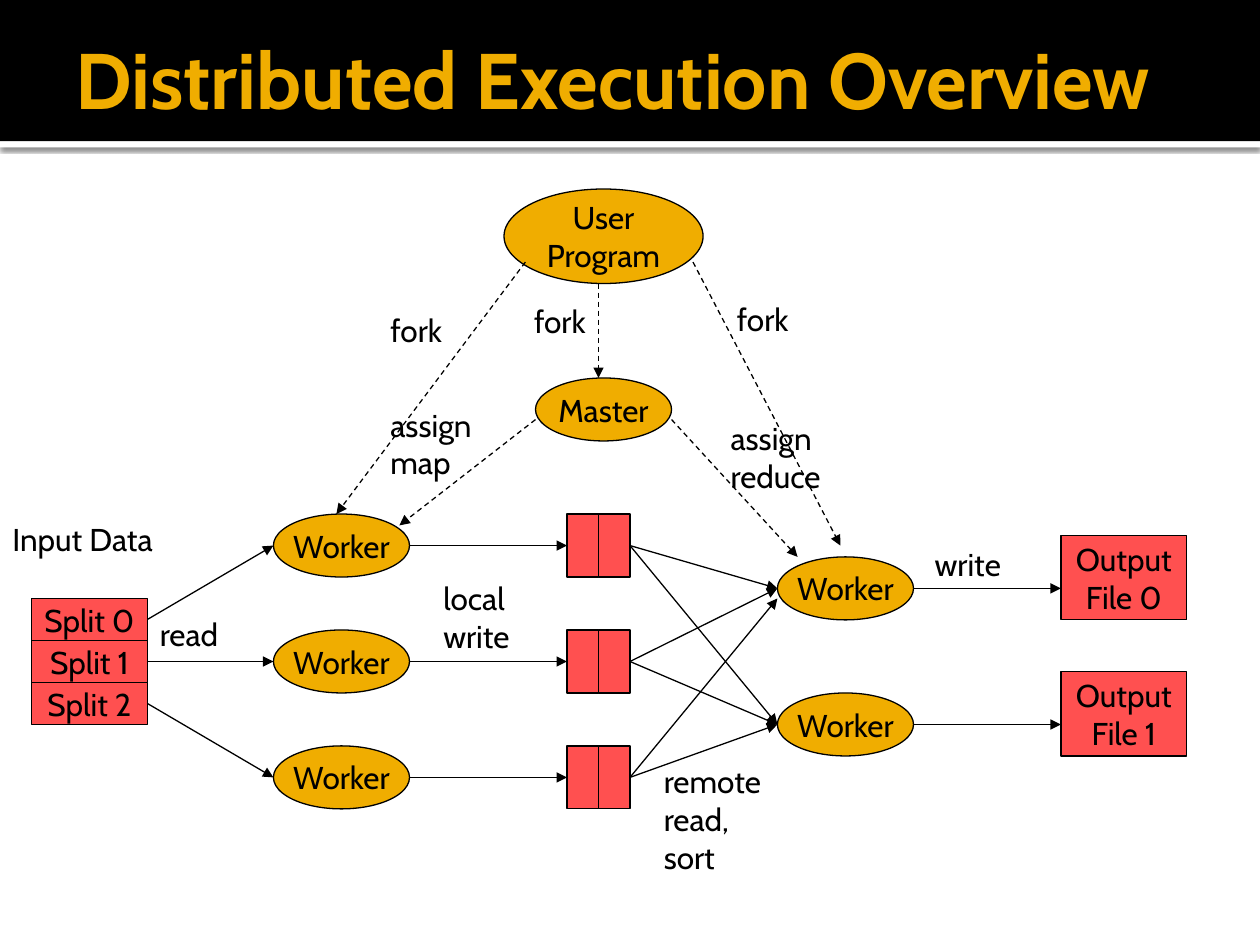
from lxml.etree import SubElement
from pptx import Presentation
from pptx.dml.color import RGBColor
from pptx.enum.dml import MSO_LINE
from pptx.enum.shapes import MSO_CONNECTOR, MSO_SHAPE
from pptx.enum.text import MSO_ANCHOR, MSO_AUTO_SIZE, PP_ALIGN
from pptx.oxml.ns import qn
from pptx.util import Inches, Pt

FONT = "Cabin"
BLACK = RGBColor(0, 0, 0)
WHITE = RGBColor(255, 255, 255)
AMBER = RGBColor(0xF0, 0xAD, 0x00)
RED = RGBColor(0xFF, 0x50, 0x50)

TITLE = "Distributed Execution Overview"
SPLITS = ["Split 0", "Split 1", "Split 2"]
OUTPUTS = ["Output\nFile 0", "Output\nFile 1"]
LABELS = [
    ("fork", 3, 2.42, 0.69),
    ("fork", 4.14, 2.35, 0.69),
    ("fork", 5.75, 2.33, 0.69),
    ("assign\nmap", 3, 3.17, 0.99),
    ("assign\nreduce", 5.7, 3.28, 1.05),
    ("read", 1.17, 4.83, 0.76),
    ("local\nwrite", 3.42, 4.55, 0.83),
    ("remote\nread,\nsort", 5.17, 6, 1.1),
    ("write", 7.32, 4.28, 0.83),
    ("Input Data", 0, 4.08, 1.56),
]
CONTROL_ARROWS = [
    ((4.75, 2.25), (4.75, 3)),
    ((4.17, 2.08), (2.67, 4.08)),
    ((5.5, 2.08), (6.67, 4.33)),
    ((4.25, 3.33), (3.17, 4.17)),
    ((5.33, 3.33), (6.33, 4.42)),
]

NODE_WIDTH, NODE_HEIGHT = 1.08, 0.5
MAP_LEFT, MAP_MIDDLE, MAP_PITCH = 2.17, 4.33, 0.92
REDUCE_LEFT, REDUCE_MIDDLE, REDUCE_PITCH = 6.17, 4.67, 1.08
SPLIT_LEFT, SPLIT_TOP, SPLIT_WIDTH, SPLIT_HEIGHT = 0.25, 4.75, 0.92, 1 / 3
BUCKET_LEFT, BUCKET_WIDTH = 4.5, 0.25
OUTPUT_LEFT, OUTPUT_TOP, OUTPUT_HEIGHT = 8.42, 4.25, 0.67
LEFT_SIDE, RIGHT_SIDE = 1, 3

deck = Presentation()
deck.slide_width, deck.slide_height = Inches(10), Inches(7.5)
page = deck.slides.add_slide(deck.slide_layouts[6])


def write(box, text, align=PP_ALIGN.LEFT, size=18, color=BLACK, bold=False):
    frame = box.text_frame
    frame.word_wrap = False
    frame.text = text
    for paragraph in frame.paragraphs:
        paragraph.alignment = align
        paragraph.font.name = FONT
        paragraph.font.size = Pt(size)
        paragraph.font.bold = bold
        paragraph.font.color.rgb = color
    return frame


def add_box(kind, left, top, width, height, fill, text="", outlined=True):
    box = page.shapes.add_shape(kind, Inches(left), Inches(top), Inches(width), Inches(height))
    box.shadow.inherit = False
    box.fill.solid()
    box.fill.fore_color.rgb = fill
    if outlined:
        box.line.color.rgb = BLACK
        box.line.width = Pt(0.75)
    else:
        box.line.fill.background()
    if text:
        write(box, text, PP_ALIGN.CENTER).vertical_anchor = MSO_ANCHOR.MIDDLE
    return box


def add_node(text, left, middle):
    return add_box(MSO_SHAPE.OVAL, left, middle - NODE_HEIGHT / 2, NODE_WIDTH, NODE_HEIGHT, AMBER, text)


def add_arrow(start, end, dashed=False, source=None, target=None):
    points = [Inches(value) for value in (*start, *end)]
    arrow = page.shapes.add_connector(MSO_CONNECTOR.STRAIGHT, *points)
    if source:
        arrow.begin_connect(source, RIGHT_SIDE)
    if target:
        arrow.end_connect(target, LEFT_SIDE)
    arrow.line.color.rgb = BLACK
    arrow.line.width = Pt(0.75)
    if dashed:
        arrow.line.dash_style = MSO_LINE.DASH
    properties = arrow.element.spPr
    SubElement(properties.find(qn("a:ln")), qn("a:tailEnd"), type="triangle")
    SubElement(properties, qn("a:effectLst"))


def add_header():
    strip = add_box(MSO_SHAPE.RECTANGLE, 0, 1.12, 10, 0.05, WHITE, outlined=False)
    effects = strip.element.spPr.find(qn("a:effectLst"))
    shadow = SubElement(effects, qn("a:outerShdw"), blurRad=str(Pt(2.5)), dist=str(Pt(0.8)),
                        dir="5400000", algn="t", rotWithShape="0")
    color = SubElement(shadow, qn("a:srgbClr"), val=str(BLACK))
    SubElement(color, qn("a:alpha"), val="60000")
    add_box(MSO_SHAPE.RECTANGLE, 0, 0, 10, 1.12, BLACK, outlined=False)
    title = page.shapes.add_textbox(Inches(0.5), Inches(0.08), Inches(9), Inches(1.08))
    frame = write(title, TITLE, size=45, color=AMBER, bold=True)
    frame.word_wrap = True
    frame.vertical_anchor = MSO_ANCHOR.MIDDLE
    frame.margin_right = Inches(0.05)


def add_diagram():
    add_box(MSO_SHAPE.OVAL, 4, 1.5, 1.58, 0.75, AMBER, "User\nProgram")
    add_node("Master", 4.25, 3.25)
    for start, end in CONTROL_ARROWS:
        add_arrow(start, end, dashed=True)

    reduce_middles = [REDUCE_MIDDLE + row * REDUCE_PITCH for row in range(len(OUTPUTS))]
    for row, (text, middle) in enumerate(zip(OUTPUTS, reduce_middles)):
        add_node("Worker", REDUCE_LEFT, middle)
        add_box(MSO_SHAPE.RECTANGLE, OUTPUT_LEFT, OUTPUT_TOP + row * REDUCE_PITCH,
                1, OUTPUT_HEIGHT, RED, text)
        add_arrow((REDUCE_LEFT + NODE_WIDTH, middle), (OUTPUT_LEFT, middle))

    for row, text in enumerate(SPLITS):
        middle = MAP_MIDDLE + row * MAP_PITCH
        split_top = SPLIT_TOP + row * SPLIT_HEIGHT
        split = add_box(MSO_SHAPE.RECTANGLE, SPLIT_LEFT, split_top, SPLIT_WIDTH, SPLIT_HEIGHT, RED, text)
        add_node("Worker", MAP_LEFT, middle)
        first, second = [
            add_box(MSO_SHAPE.RECTANGLE, BUCKET_LEFT + column * BUCKET_WIDTH,
                    middle - NODE_HEIGHT / 2, BUCKET_WIDTH, NODE_HEIGHT, RED)
            for column in range(2)
        ]
        add_arrow((SPLIT_LEFT + SPLIT_WIDTH, split_top + SPLIT_HEIGHT / 2),
                  (MAP_LEFT, middle), source=split)
        add_arrow((MAP_LEFT + NODE_WIDTH, middle), (BUCKET_LEFT, middle), target=first)
        for column, end in enumerate(reduce_middles):
            if row == 2 and column == 0:
                end += 0.08
            add_arrow((BUCKET_LEFT + 2 * BUCKET_WIDTH, middle), (REDUCE_LEFT, end), source=second)

    for text, left, top, width in LABELS:
        height = 0.1 + 0.3 * len(text.split("\n"))
        label = page.shapes.add_textbox(Inches(left), Inches(top), Inches(width), Inches(height))
        write(label, text).auto_size = MSO_AUTO_SIZE.SHAPE_TO_FIT_TEXT


add_header()
add_diagram()
deck.save("out.pptx")
